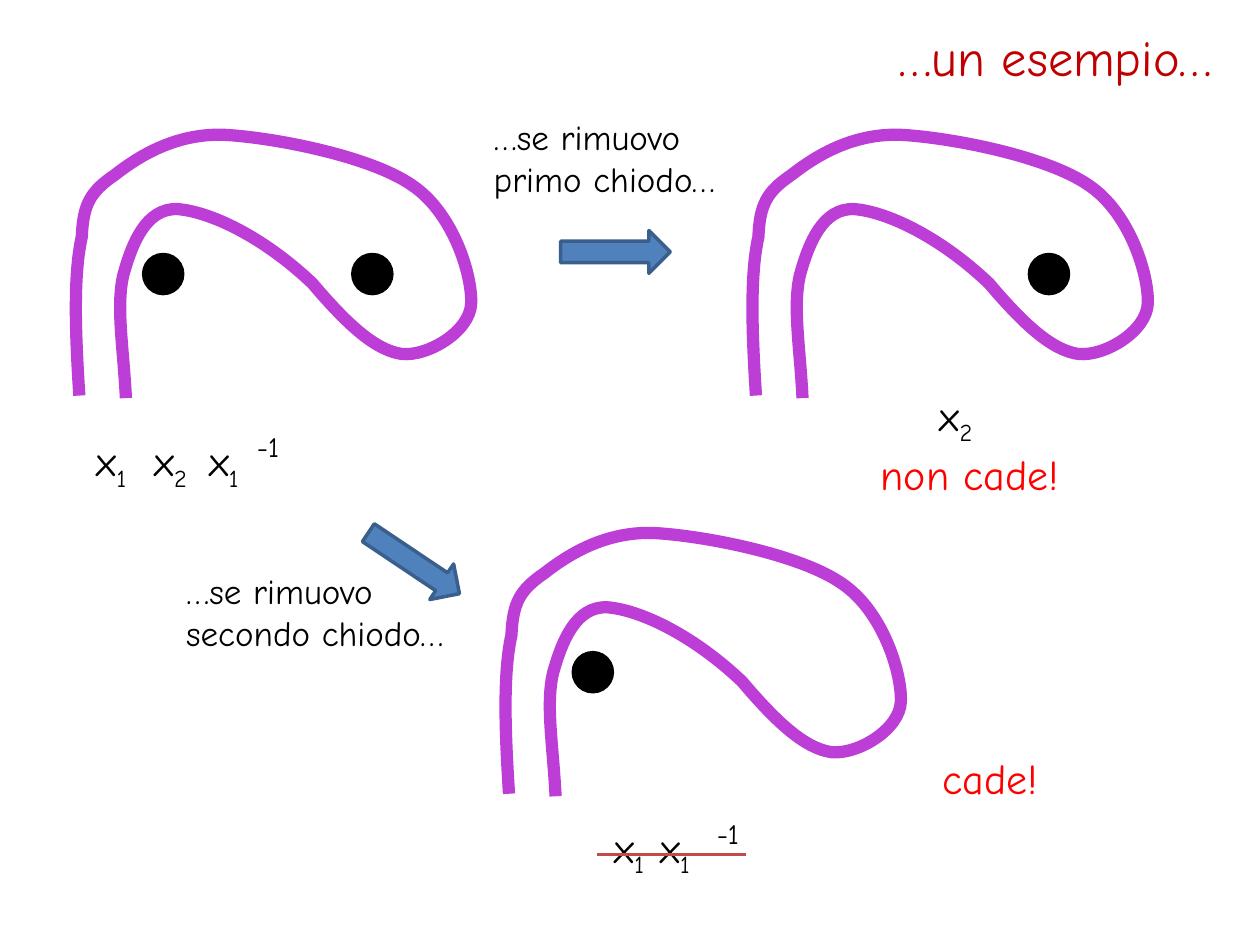
from dataclasses import dataclass

from lxml import etree
from pptx import Presentation
from pptx.dml.color import RGBColor
from pptx.enum import shapes, text
from pptx.oxml import ns
from pptx.util import Inches, Pt


@dataclass(frozen=True)
class Theme:
    font: str = "Comic Neue"
    title: str = "C00000"
    ink: str = "000000"
    verdict: str = "FF0000"
    rope: str = "BD3DD7"
    arrow: str = "4F81BD"
    arrow_edge: str = "3A5F8C"
    strike: str = "BF4C48"
    title_size: float = 28.8
    formula_size: int = 24
    note_size: int = 20
    exponent_size: int = 16
    rope_width: int = 7
    edge_width: int = 2


theme = Theme()


def add_run(paragraph, wording, size, color, subscript=False):
    run = paragraph.add_run()
    run.text = wording
    run.font.name = theme.font
    run.font.size = Pt(size)
    run.font.color.rgb = RGBColor.from_string(color)
    if subscript:
        run._r.get_or_add_rPr().set("baseline", "-25000")


def paint(shape, fill, edge, width):
    shape.shadow.inherit = False
    if fill:
        shape.fill.solid()
        shape.fill.fore_color.rgb = RGBColor.from_string(fill)
    else:
        shape.fill.background()
    shape.line.color.rgb = RGBColor.from_string(edge)
    shape.line.width = Pt(width)


prs = Presentation()
prs.slide_width, prs.slide_height = Inches(10), Inches(7.5)
slide = prs.slides.add_slide(prs.slide_layouts[5])

title = slide.shapes.title
title.left, title.top = Inches(0.35), Inches(0.13)
title.width, title.height = Inches(9.37), Inches(0.63)
title.text_frame.auto_size = text.MSO_AUTO_SIZE.NONE
title.text_frame.vertical_anchor = text.MSO_ANCHOR.MIDDLE
heading = title.text_frame.paragraphs[0]
heading.alignment = text.PP_ALIGN.RIGHT
add_run(heading, "…un esempio…", theme.title_size, theme.title)

rope_start = (63, 314)
rope_curves = [
    (60, 266), (58, 219), (65, 188),
    (66, 162), (72, 152), (91, 139),
    (109, 125), (138, 106), (177, 107),
    (217, 109), (294, 124), (327, 147),
    (360, 169), (375, 219), (374, 241),
    (373, 263), (340, 283), (319, 281),
    (298, 278), (276, 258), (248, 225),
    (208, 187), (166, 168), (141, 166),
    (116, 165), (105, 193), (98, 218),
    (92, 243), (98, 276), (100, 316),
]
first_nail, second_nail = 1.14, 2.8
nail_top, nail_size = 2.02, 0.31
scenes = [
    (0, 0, [first_nail, second_nail]),
    (5.37, 0, [second_nail]),
    (3.41, 3.16, [first_nail]),
]
for dx, dy, nails in scenes:
    for nail_left in nails:
        nail = slide.shapes.add_shape(
            shapes.MSO_SHAPE.OVAL, Inches(nail_left + dx), Inches(nail_top + dy),
            Inches(nail_size), Inches(nail_size))
        paint(nail, theme.ink, theme.ink, theme.edge_width)

    outline = slide.shapes.build_freeform(*rope_start, scale=Inches(0.01))
    outline.add_line_segments(rope_curves, close=False)
    rope = outline.convert_to_shape(Inches(dx), Inches(dy))
    paint(rope, None, theme.rope, theme.rope_width)
    track = next(rope._element.iter(ns.qn("a:path")))
    steps = track.findall(ns.qn("a:lnTo"))
    for i in range(0, len(steps), 3):
        curve = etree.SubElement(track, ns.qn("a:cubicBezTo"))
        for step in steps[i:i + 3]:
            curve.append(step[0])
            track.remove(step)

formula, exponent = theme.formula_size, theme.exponent_size
note, ink, verdict = theme.note_size, theme.ink, theme.verdict
captions = [
    (0.67, 3.4, 2.68, 0.5, formula, ink,
     [[("x", False), ("1", True), ("  x", False), ("2 ", True), (" x", False), ("1", True)]]),
    (1.94, 3.36, 0.55, 0.37, exponent, ink, [[("-1", False)]]),
    (7.36, 3.04, 0.77, 0.5, formula, ink, [[("x", False), ("2", True)]]),
    (4.78, 6.47, 1.26, 0.5, formula, ink,
     [[("x", False), ("1  ", True), ("x", False), ("1", True)]]),
    (5.59, 6.43, 0.55, 0.37, exponent, ink, [[("-1", False)]]),
    (3.82, 0.87, 2.36, 0.77, note, ink,
     [[("…se rimuovo", False)], [("primo chiodo…", False)]]),
    (6.89, 3.51, 1.72, 0.5, formula, verdict, [[("non cade!", False)]]),
    (7.38, 5.92, 1.72, 0.5, formula, verdict, [[("cade!", False)]]),
    (1.38, 4.47, 2.36, 0.77, note, ink,
     [[("…se rimuovo", False)], [("secondo chiodo…", False)]]),
]
for left, top, width, height, size, color, lines in captions:
    caption = slide.shapes.add_textbox(
        Inches(left), Inches(top), Inches(width), Inches(height))
    frame = caption.text_frame
    frame.word_wrap = True
    frame.auto_size = text.MSO_AUTO_SIZE.SHAPE_TO_FIT_TEXT
    for i, line in enumerate(lines):
        paragraph = frame.add_paragraph() if i else frame.paragraphs[0]
        for wording, subscript in line:
            add_run(paragraph, wording, size, color, subscript)

for left, top, angle in [(4.45, 1.83, 0), (2.85, 4.3, 33.8)]:
    removal_arrow = slide.shapes.add_shape(
        shapes.MSO_SHAPE.RIGHT_ARROW, Inches(left), Inches(top), Inches(0.87), Inches(0.34))
    removal_arrow.rotation = angle
    paint(removal_arrow, theme.arrow, theme.arrow_edge, theme.edge_width)

strike = slide.shapes.add_connector(
    shapes.MSO_CONNECTOR.STRAIGHT, Inches(4.74), Inches(6.78), Inches(5.92), Inches(6.78))
strike.line.color.rgb = RGBColor.from_string(theme.strike)
strike.line.width = Pt(theme.edge_width)
etree.SubElement(strike._element.spPr, ns.qn("a:effectLst"))

prs.save("out.pptx")
